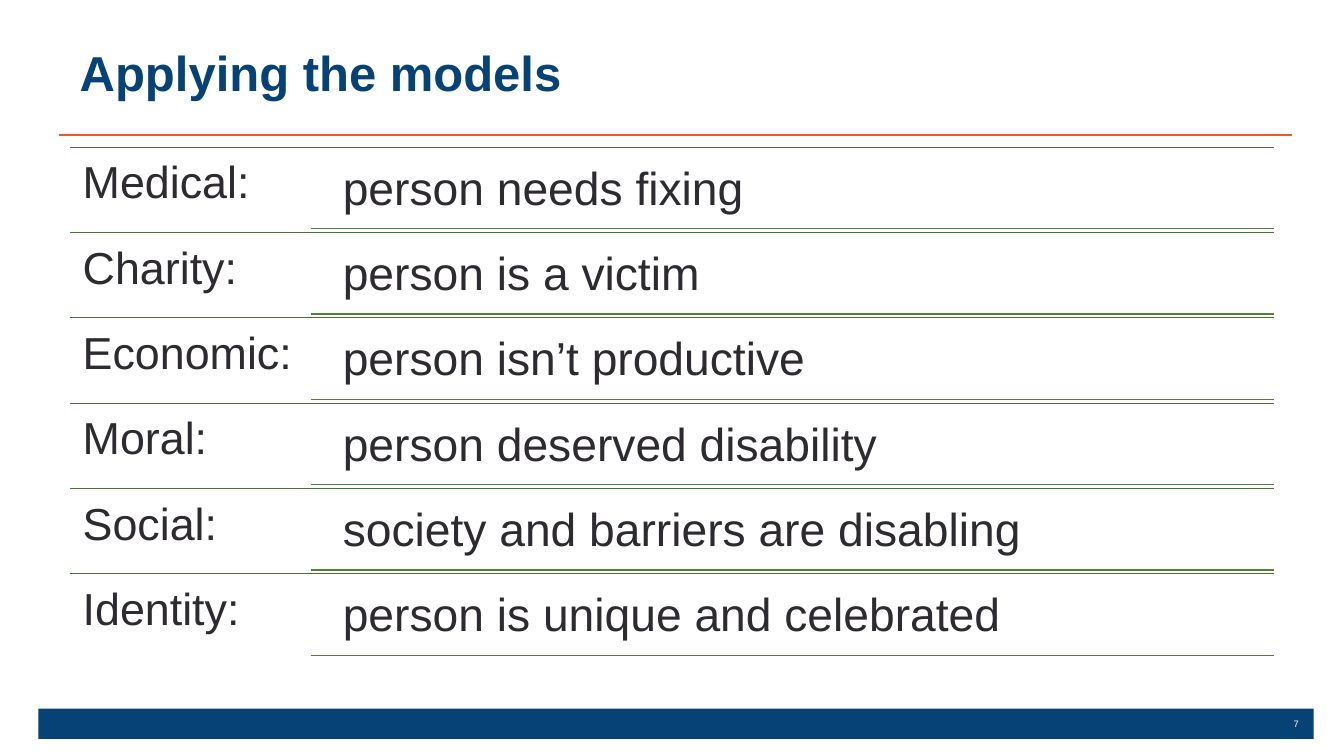
import pptx
import pptx.dml.color
import pptx.enum.shapes
import pptx.enum.text
import pptx.oxml
import pptx.util

Inches = pptx.util.Inches
Align = pptx.enum.text.PP_ALIGN
Anchor = pptx.enum.text.MSO_ANCHOR

NAVY, ORANGE, INK, WHITE = "064276", "EC5A24", "2D2A30", "FFFFFF"
ROW_GREEN, RULE_GREEN = "4C7236", "547E3B"

MODELS = [
    ("Medical:", "person needs fixing"),
    ("Charity:", "person is a victim"),
    ("Economic:", "person isn’t productive"),
    ("Moral:", "person deserved disability"),
    ("Social:", "society and barriers are disabling"),
    ("Identity:", "person is unique and celebrated"),
]


def colour(value):
    return pptx.dml.color.RGBColor.from_string(value)


def apply(target, values):
    for name, value in values.items():
        setattr(target, name, value)


class SlideBuilder:
    font = "Arial"

    def __init__(self, page):
        self.page = page

    def fill_text(self, box, text, size, ink, bold=False, inset=None,
                  anchor=Anchor.TOP, **paragraph_format):
        frame = box.text_frame
        apply(frame, {"word_wrap": True, "vertical_anchor": anchor,
                      "auto_size": pptx.enum.text.MSO_AUTO_SIZE.NONE})
        if inset is not None:
            sides = ("left", "top", "right", "bottom")
            apply(frame, {f"margin_{side}": Inches(inset) for side in sides})
        para = frame.paragraphs[0]
        apply(para, paragraph_format)
        span = para.add_run()
        span.text = text
        apply(span.font, {"name": self.font, "size": pptx.util.Pt(size), "bold": bold})
        span.font.color.rgb = colour(ink)

    def title(self, text, left, top, width, height):
        box = self.page.shapes.title
        apply(box, {"left": Inches(left), "top": Inches(top),
                    "width": Inches(width), "height": Inches(height)})
        self.fill_text(box, text, 35, NAVY, bold=True,
                       alignment=Align.LEFT, line_spacing=0.9)

    def text(self, text, left, top, width, height, **style):
        box = self.page.shapes.add_textbox(*map(Inches, (left, top, width, height)))
        self.fill_text(box, text, **style)

    def bar(self, left, top, width, height, fill):
        box = self.page.shapes.add_shape(
            pptx.enum.shapes.MSO_SHAPE.RECTANGLE,
            *map(Inches, (left, top, width, height)))
        box.shadow.inherit = False
        box.fill.solid()
        box.fill.fore_color.rgb = colour(fill)
        box.line.fill.background()

    def rule(self, left, right, top, ink, weight):
        line = self.page.shapes.add_connector(
            pptx.enum.shapes.MSO_CONNECTOR.STRAIGHT,
            *map(Inches, (left, top, right, top)))
        line.line.color.rgb = colour(ink)
        line.line.width = pptx.util.Pt(weight)
        properties = line.element.spPr
        properties.append(pptx.oxml.parse_xml(
            '<a:effectLst xmlns:a="http://schemas.openxmlformats.org/drawingml/2006/main"/>'))

    def model_row(self, top, model, view):
        left, right = 0.69, 12.64
        shared = {"ink": INK, "line_spacing": 0.9}
        self.rule(left, right, top, ROW_GREEN, 0.5)
        self.text(model, left, top, 2.39, 0.85, size=32, inset=0.13, **shared)
        self.text(view, 3.26, top + 0.04, 9.38, 0.77, size=33, inset=0.14, **shared)
        self.rule(3.08, right, top + 0.81, RULE_GREEN, 1)


def main():
    deck = pptx.Presentation()
    apply(deck, {"slide_width": Inches(13.33), "slide_height": Inches(7.5)})
    slide = SlideBuilder(deck.slides.add_slide(deck.slide_layouts[5]))

    slide.bar(0.38, 7.03, 12.65, 0.3, NAVY)
    slide.rule(0.59, 12.81, 1.34, ORANGE, 1)
    slide.title("Applying the models", 0.69, 0.44, 10.94, 0.9)

    first_top, last_top = 1.46, 5.69
    pitch = (last_top - first_top) / (len(MODELS) - 1)
    for index, (model, view) in enumerate(MODELS):
        slide.model_row(first_top + index * pitch, model, view)

    slide.text("7", 10.49, 7.08, 2.49, 0.2, size=6.7, ink=WHITE,
               anchor=Anchor.MIDDLE, alignment=Align.RIGHT)
    deck.save("out.pptx")


if __name__ == "__main__":
    main()
